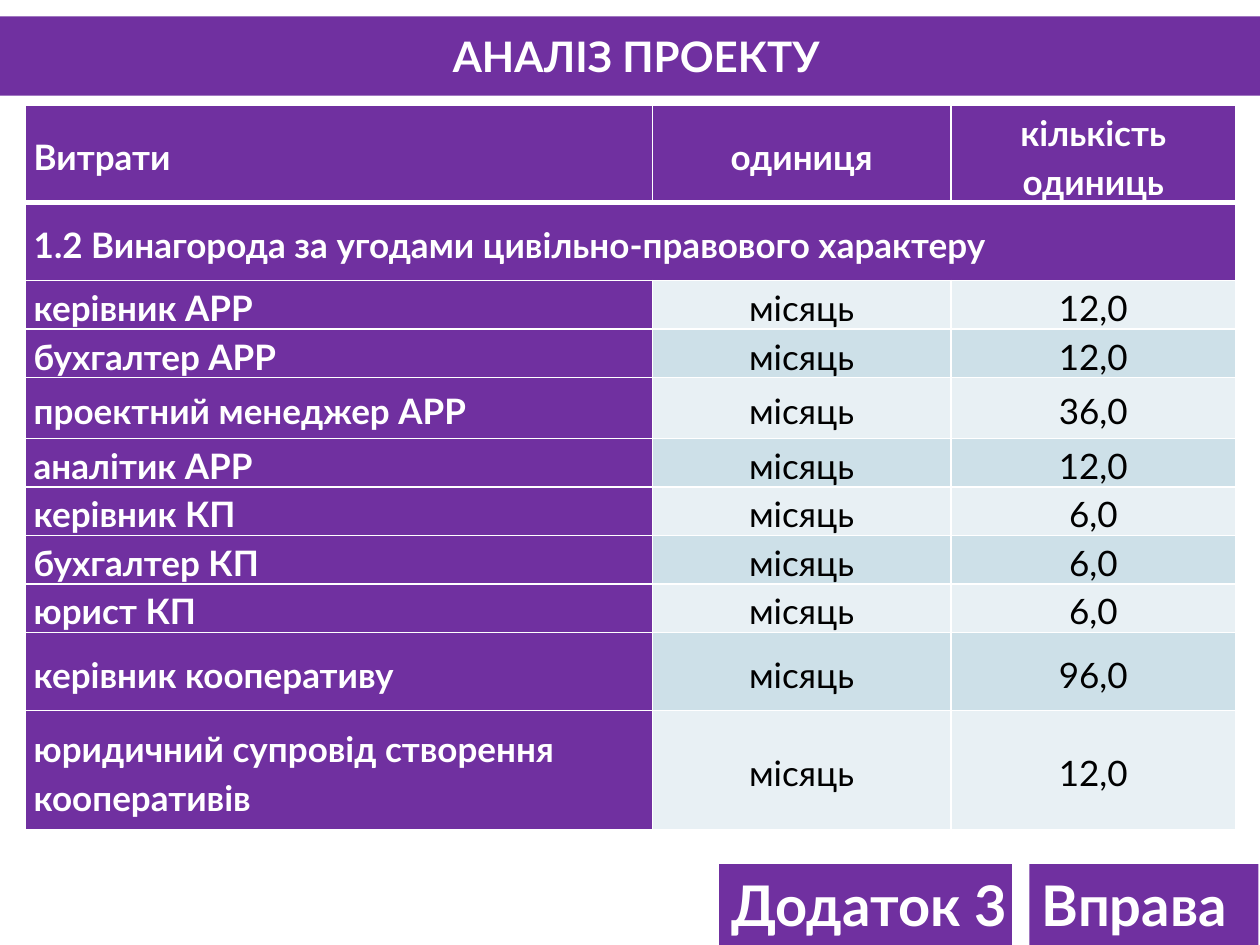
"""Build the project cost analysis slide."""
from lxml.etree import SubElement
from pptx import Presentation
from pptx.dml.color import RGBColor
from pptx.enum.shapes import MSO_SHAPE as Preset
from pptx.enum.text import MSO_ANCHOR as Anchor, PP_ALIGN as Align
from pptx.oxml.ns import qn
from pptx.util import Cm, Pt

PURPLE = RGBColor(0x70, 0x30, 0xA0)
WHITE = RGBColor(0xFF, 0xFF, 0xFF)
BLACK = RGBColor(0, 0, 0)
BANDS = RGBColor(0xE8, 0xF0, 0xF4), RGBColor(0xCD, 0xE0, 0xE8)

TITLE = "АНАЛІЗ ПРОЕКТУ"
HEADINGS = ("Витрати", "одиниця", "кількість одиниць")
SECTION = "1.2 Винагорода за угодами цивільно-правового характеру"
UNIT = "місяць"
COSTS = [
    ("керівник АРР", "12,0", 0.76),
    ("бухгалтер АРР", "12,0", 0.76),
    ("проектний менеджер АРР", "36,0", 1.22),
    ("аналітик АРР", "12,0", 0.76),
    ("керівник КП", "6,0", 0.76),
    ("бухгалтер КП", "6,0", 0.76),
    ("юрист КП", "6,0", 0.76),
    ("керівник кооперативу", "96,0", 1.57),
    ("юридичний супровід створення кооперативів", "12,0", 2.41),
]
LABELS = [("Додаток 3", 14.5, 5.9), ("Вправа", 20.75, 4.62)]
COLUMNS = (12.65, 6.02, 5.74)
HEADER_HEIGHT, SECTION_HEIGHT = 1.6, 1.57


def write(frame, text, size=20, color=WHITE, bold=True, align=Align.LEFT, spacing=None):
    paragraph = frame.paragraphs[0]
    paragraph.alignment = align
    paragraph.line_spacing = spacing
    run = paragraph.add_run()
    run.text = text
    run.font.name = "Lato"
    run.font.size = Pt(size)
    run.font.bold = bold
    run.font.color.rgb = color


def add_bar(slide, text, left, top, width, height, anchor=Anchor.TOP, **style):
    bar = slide.shapes.add_shape(
        Preset.RECTANGLE, Cm(left), Cm(top), Cm(width), Cm(height))
    bar.shadow.inherit = False
    bar.fill.solid()
    bar.fill.fore_color.rgb = PURPLE
    bar.line.fill.background()
    frame = bar.text_frame
    frame.word_wrap = True
    frame.vertical_anchor = anchor
    frame.margin_right = 0
    write(frame, text, **style)


def add_borders(cell, top=1, bottom=1):
    properties = cell._tc.get_or_add_tcPr()
    for side, width in (("L", 1), ("R", 1), ("T", top), ("B", bottom)):
        line = SubElement(properties, qn(f"a:ln{side}"), w=str(Pt(width)))
        fill = SubElement(line, qn("a:solidFill"))
        SubElement(fill, qn("a:srgbClr"), val=str(WHITE))


def add_costs(slide):
    rows = [HEADINGS, (SECTION, "", "")]
    rows += [(name, UNIT, amount) for name, amount, _ in COSTS]
    heights = [HEADER_HEIGHT, SECTION_HEIGHT] + [height for *_, height in COSTS]
    table = slide.shapes.add_table(
        len(rows), len(COLUMNS), Cm(0.5), Cm(2.13),
        Cm(sum(COLUMNS)), Cm(sum(heights))).table
    for column, width in zip(table.columns, COLUMNS):
        column.width = Cm(width)
    table.cell(1, 0).merge(table.cell(1, 2))
    for r, (texts, height) in enumerate(zip(rows, heights)):
        table.rows[r].height = Cm(height)
        for c, text in enumerate(texts):
            cell = table.cell(r, c)
            is_value = r > 1 and c > 0
            add_borders(cell, top=3 if r == 1 else 1, bottom=3 if r == 0 else 1)
            cell.fill.solid()
            cell.fill.fore_color.rgb = BANDS[r % 2] if is_value else PURPLE
            cell.vertical_anchor = Anchor.MIDDLE
            cell.margin_left = cell.margin_right = Cm(0.18)
            cell.margin_top = cell.margin_bottom = 0
            if text:
                write(cell.text_frame, text, color=BLACK if is_value else WHITE,
                      bold=not is_value, spacing=1.15,
                      align=Align.CENTER if c else Align.LEFT)


def main():
    deck = Presentation()
    deck.slide_width, deck.slide_height = Cm(25.4), Cm(19.05)
    slide = deck.slides.add_slide(deck.slide_layouts[6])
    add_bar(slide, TITLE, 0, 0.33, 25.4, 1.6,
            anchor=Anchor.MIDDLE, size=24, align=Align.CENTER)
    add_costs(slide)
    for text, left, width in LABELS:
        add_bar(slide, text, left, 17.42, width, 1.63, size=32)
    deck.save("out.pptx")


if __name__ == "__main__":
    main()
